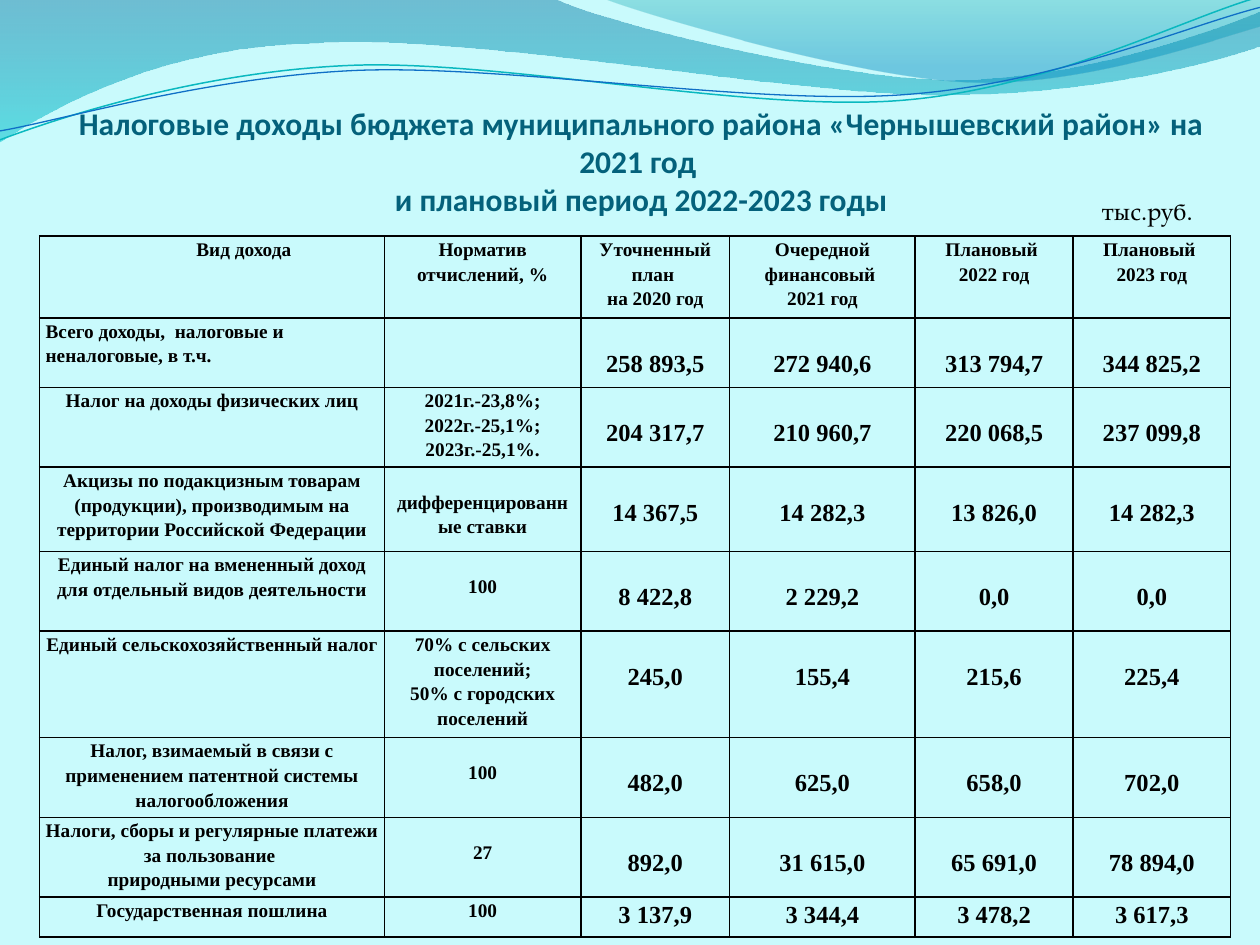
"""Build the slide on tax revenues of the district budget for 2021-2023."""
from lxml import etree
from pptx import Presentation
from pptx import util as u
from pptx.dml.color import RGBColor
from pptx.enum import text
from pptx.oxml import ns

COLORS = {
    "page": "C9FAFC", "title": "04617B", "ink": "000000",
    "deep": "0074A1", "aqua": "00C6CF", "teal": "00A1A9", "sky": "008BBF",
    "upper_line": "0AB8BF", "lower_line": "0F6FC6",
}


def write(frame, content, font="Times New Roman", size=11, bold=True, color="ink",
          align="CENTER", spacing=1.0):
    for number, line in enumerate(content.split("\n")):
        paragraph = frame.paragraphs[0] if number == 0 else frame.add_paragraph()
        paragraph.text = line
        paragraph.alignment = getattr(text.PP_ALIGN, align)
        paragraph.line_spacing = spacing
        for run in paragraph.runs:
            run.font.name = font
            run.font.size = u.Pt(size)
            run.font.bold = bold
            run.font.color.rgb = RGBColor.from_string(COLORS[color])
        for line_break in paragraph._p.findall(ns.qn("a:br")):
            etree.SubElement(line_break, ns.qn("a:rPr"), sz=str(size * 100))
        etree.SubElement(paragraph._p, ns.qn("a:endParaRPr"), sz=str(size * 100))


def draw_wave(slide, start, segments, close):
    builder = slide.shapes.build_freeform(u.Cm(start[0]), u.Cm(start[1]))
    builder.add_line_segments(
        [(u.Cm(x), u.Cm(y)) for x, y in (segment[-1] for segment in segments)], close=close)
    wave = builder.convert_to_shape()
    wave.shadow.inherit = False
    for side, segment in zip(list(wave._element.iter(ns.qn("a:lnTo"))), segments):
        if len(segment) == 3:
            curve = etree.Element(ns.qn("a:cubicBezTo"))
            for x, y in segment:
                etree.SubElement(curve, ns.qn("a:pt"), x=str(u.Cm(x) - wave.left),
                                 y=str(u.Cm(y) - wave.top))
            side.getparent().replace(side, curve)
    return wave


prs = Presentation()
prs.slide_width, prs.slide_height = u.Cm(25.4), u.Cm(19.05)
slide = prs.slides.add_slide(prs.slide_layouts[6])
slide.background.fill.solid()
slide.background.fill.fore_color.rgb = RGBColor.from_string(COLORS["page"])

bands = [
    ((0, 0), [
        [(11.18, -0.03)],
        [(12.09, 0.43), (16.87, 1.6), (19.25, 1.6)],
        [(21.67, 1.6), (24.33, 0.66), (25.4, 0.23)],
        [(25.43, 0.91)],
        [(24.97, 1.12), (22.1, 1.93), (18.95, 1.91)],
        [(15.8, 1.91), (9.7, 0.71), (6.53, 0.86)],
        [(3.28, 0.91), (1.17, 2.11), (-0.03, 2.87)],
    ], [("deep", 0, 45), ("aqua", 1, 55)]),
    ((12.17, -0.03), [
        [(12.93, 0.28), (17.32, 1.57), (19.53, 1.65)],
        [(21.74, 1.75), (24.41, 0.81), (25.4, 0.53)],
        [(25.4, 0)],
    ], [("teal", 0, 30), ("sky", 0.8, 45)]),
]
for start, segments, stops in bands:
    band = draw_wave(slide, start, segments, True)
    band.line.fill.background()
    band.fill.gradient()
    band.fill.gradient_angle = 270
    for stop, (color, position, opacity) in zip(band.fill.gradient_stops, stops):
        stop.color.rgb = RGBColor.from_string(COLORS[color])
        stop.position = position
    gradient = band.fill._xPr
    for tint, (_, _, opacity) in zip(gradient.iter(ns.qn("a:srgbClr")), stops):
        etree.SubElement(tint, ns.qn("a:alpha")).set("val", str(opacity * 1000))

ribbons = [
    ((0, 2.82), [
        [(1.22, 2.36), (4.01, 1.45), (7.04, 1.32)],
        [(10.03, 1.19), (15.06, 2.26), (18.11, 2.03)],
        [(21.16, 1.8), (23.83, 0.38), (25.35, -0.05)],
    ], "upper_line", 0.85),
    ((0, 2.64), [
        [(1.19, 2.44), (4.17, 1.55), (7.19, 1.42)],
        [(10.24, 1.3), (15.16, 2.13), (18.21, 1.91)],
        [(21.23, 1.7), (23.9, 0.53), (25.4, 0.15)],
    ], "lower_line", 0.75),
]
for start, segments, color, width in ribbons:
    ribbon = draw_wave(slide, start, segments, False)
    ribbon.fill.background()
    ribbon.line.color.rgb = RGBColor.from_string(COLORS[color])
    ribbon.line.width = u.Pt(width)

title = slide.shapes.add_textbox(u.Cm(1.4), u.Cm(2.59), u.Cm(23.06), u.Cm(1.8)).text_frame
title.word_wrap = True
title.vertical_anchor = text.MSO_ANCHOR.BOTTOM
title.margin_left = title.margin_right = title.margin_bottom = 0
write(title, "Налоговые доходы бюджета муниципального района «Чернышевский район» на 2021 год "
      "\vи плановый период 2022-2023 годы", font="Calibri", size=18, color="title")

units = slide.shapes.add_textbox(u.Cm(21.44), u.Cm(3.96), u.Cm(3.38), u.Cm(0.58)).text_frame
units.word_wrap = True
units.vertical_anchor = text.MSO_ANCHOR.MIDDLE
write(units, "тыс.руб.", font="TeX Gyre Pagella", size=14, bold=False)

rows = [
    ["Вид дохода", "Норматив отчислений, %", "Уточненный план \nна 2020 год",
     "Очередной финансовый \n2021 год", "Плановый \n2022 год", "Плановый \n2023 год"],
    ["Всего доходы,  налоговые и неналоговые, в т.ч.", "",
     "258 893,5", "272 940,6", "313 794,7", "344 825,2"],
    ["Налог на доходы физических лиц", "2021г.-23,8%;\n2022г.-25,1%;\n2023г.-25,1%.",
     "204 317,7", "210 960,7", "220 068,5", "237 099,8"],
    ["Акцизы по подакцизным товарам (продукции), производимым на территории "
     "Российской Федерации", "дифференцированные ставки",
     "14 367,5", "14 282,3", "13 826,0", "14 282,3"],
    ["Единый налог на вмененный доход для отдельный видов деятельности", "100",
     "8 422,8", "2 229,2", "0,0", "0,0"],
    ["Единый сельскохозяйственный налог",
     "70% с сельских поселений;\n50% с городских поселений",
     "245,0", "155,4", "215,6", "225,4"],
    ["Налог, взимаемый в связи с применением патентной системы налогообложения", "100",
     "482,0", "625,0", "658,0", "702,0"],
    ["Налоги, сборы и регулярные платежи за пользование \vприродными ресурсами", "27",
     "892,0", "31 615,0", "65 691,0", "78 894,0"],
    ["Государственная пошлина", "100", "3 137,9", "3 344,4", "3 478,2", "3 617,3"],
]
column_widths = [6.95, 3.96, 3, 3.74, 3.18, 3.18]
row_heights = [1.65, 1.4, 1.19, 1.7, 1.61, 1.61, 1.61, 1.61, 0.8]
lowered_rates = {3, 4, 6, 7}
last = len(rows) - 1

revenues = slide.shapes.add_table(
    len(rows), len(column_widths), u.Cm(0.8), u.Cm(4.76),
    u.Cm(sum(column_widths)), u.Cm(sum(row_heights))).table
revenues.first_row = revenues.horz_banding = False
for column, width in zip(revenues.columns, column_widths):
    column.width = u.Cm(width)
for r, (values, height) in enumerate(zip(rows, row_heights)):
    revenues.rows[r].height = u.Cm(height)
    for c, value in enumerate(values):
        cell = revenues.cell(r, c)
        amount = r > 0 and c > 1
        drop = 0
        if amount and r < last:
            drop = 0.57
        elif c == 1 and r in lowered_rates:
            drop = 0.44
        cell.margin_left = u.Cm(1.4 if r == c == 0 else 0.12)
        cell.margin_right = u.Cm(0.12)
        cell.margin_top, cell.margin_bottom = u.Cm(drop), 0
        write(cell.text_frame, value, size=14 if amount else 11, spacing=1.15,
              align="LEFT" if (r, c) == (1, 0) else "CENTER")
        cell.fill.background()
        borders = cell._tc.get_or_add_tcPr()
        for place, side in enumerate(("lnL", "lnR", "lnT", "lnB")):
            edge = etree.Element(ns.qn("a:" + side), w=str(u.Pt(1)))
            paint = etree.SubElement(edge, ns.qn("a:solidFill"))
            etree.SubElement(paint, ns.qn("a:srgbClr"), val=COLORS["ink"])
            borders.insert(place, edge)

prs.save("out.pptx")
